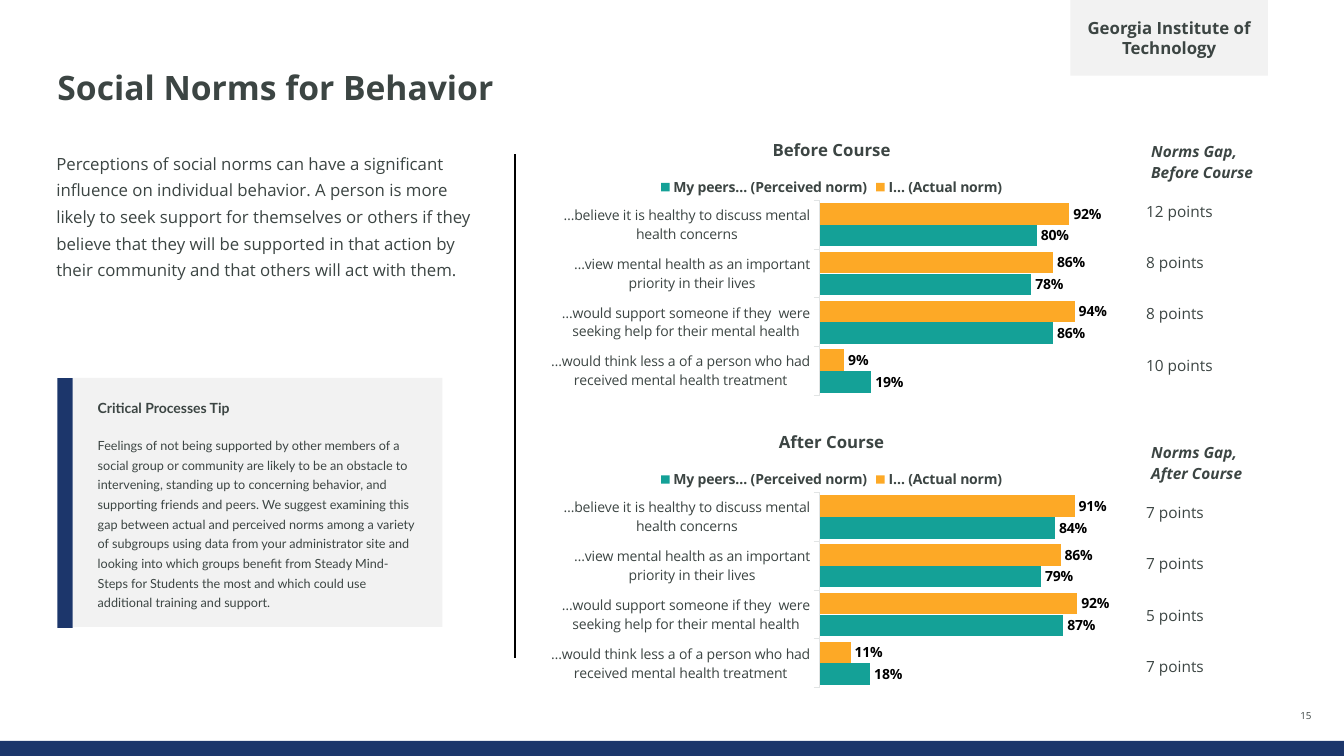
from lxml import etree
from pptx import Presentation
from pptx.chart.data import CategoryChartData
from pptx.dml.color import RGBColor
from pptx.enum.chart import XL_CHART_TYPE, XL_LABEL_POSITION, XL_LEGEND_POSITION, XL_TICK_LABEL_POSITION, XL_TICK_MARK
from pptx.enum.shapes import MSO_CONNECTOR, MSO_SHAPE
from pptx.enum.text import MSO_ANCHOR, PP_ALIGN
from pptx.oxml import parse_xml
from pptx.oxml.ns import nsdecls, qn
from pptx.util import Pt

RECT, STRAIGHT = MSO_SHAPE.RECTANGLE, MSO_CONNECTOR.STRAIGHT
BAR, OUT_END = XL_CHART_TYPE.BAR_CLUSTERED, XL_LABEL_POSITION.OUTSIDE_END
LEGEND_TOP, LOW = XL_LEGEND_POSITION.TOP, XL_TICK_LABEL_POSITION.LOW
TICK_OUT, TICK_NONE = XL_TICK_MARK.OUTSIDE, XL_TICK_MARK.NONE
TOP, MIDDLE, BOTTOM = MSO_ANCHOR.TOP, MSO_ANCHOR.MIDDLE, MSO_ANCHOR.BOTTOM
CENTER, LEFT = PP_ALIGN.CENTER, PP_ALIGN.LEFT

NAVY, GRAY, INK, BLACK = "1C366B", "F2F2F2", "3C4543", "000000"
ORANGE, TEAL, AXIS = "FDA926", "14A197", "E1E4E4"

TITLE = "Social Norms for Behavior"
SCHOOL = "Georgia Institute of Technology"
INTRO = ("Perceptions of social norms can have a significant influence on individual behavior. "
         "A person is more likely to seek support for themselves or others if they believe that "
         "they will be supported in that action by their community and that others will act with them.")
TIP_HEAD = "Critical Processes Tip"
TIP = ("Feelings of not being supported by other members of a social group or community are likely "
       "to be an obstacle to intervening, standing up to concerning behavior, and supporting friends "
       "and peers. We suggest examining this gap between actual and perceived norms among a variety "
       "of subgroups using data from your administrator site and looking into which groups benefit "
       "from Steady Mind-Steps for Students the most and which could use additional training and support.")
NORMS = ["…believe it is healthy to discuss mental health concerns",
         "…view mental health as an important priority in their lives",
         "…would support someone if they  were seeking help for their mental health",
         "…would think less a of a person who had received mental health treatment"]
SERIES = [("I… (Actual norm)", ORANGE), ("My peers… (Perceived norm)", TEAL)]
COURSES = [
    {"name": "Before Course", "chart_top": 87.12, "table_top": 97.2, "plot_w": 0.464,
     "values": [(0.92, 0.86, 0.94, 0.09), (0.8, 0.78, 0.86, 0.19)],
     "gaps": [12, 8, 8, 10]},
    {"name": "After Course", "chart_top": 295.92, "table_top": 312.48, "plot_w": 0.479,
     "values": [(0.91, 0.86, 0.92, 0.11), (0.84, 0.79, 0.87, 0.18)],
     "gaps": [7, 7, 5, 7]},
]


def rgb(value):
    return RGBColor.from_string(value)


def style(font, size, color=INK, name="Open Sans", **flags):
    values = {"size": Pt(size), "name": name, "bold": False, "italic": False, **flags}
    for key, value in values.items():
        setattr(font, key, value)
    font.color.rgb = rgb(color)


def write(tf, paragraphs, align=LEFT, spacing=None, before=0):
    for i, (text, fmt) in enumerate(paragraphs):
        p = tf.paragraphs[0] if i == 0 else tf.add_paragraph()
        p.alignment = align
        if spacing:
            p.line_spacing = spacing
        if i:
            p.space_before = Pt(before)
        r = p.add_run()
        r.text = text
        style(r.font, **fmt)


def set_frame(tf, anchor, side, edge):
    values = {"word_wrap": True, "vertical_anchor": anchor, "margin_left": Pt(side),
              "margin_right": Pt(side), "margin_top": Pt(edge), "margin_bottom": Pt(edge)}
    for key, value in values.items():
        setattr(tf, key, value)


def add_text(box, paragraphs, anchor=TOP, side=0, edge=0, **layout):
    tf = s.shapes.add_textbox(*map(Pt, box)).text_frame
    set_frame(tf, anchor, side, edge)
    write(tf, paragraphs, **layout)


def add_rect(box, color, paragraphs=(), side=0, **layout):
    sp = s.shapes.add_shape(RECT, *map(Pt, box))
    sp.shadow.inherit = False
    sp.fill.solid()
    sp.fill.fore_color.rgb = rgb(color)
    sp.line.fill.background()
    set_frame(sp.text_frame, MIDDLE, side, 0)
    write(sp.text_frame, paragraphs, **layout)


def set_plot_area(chart, x, y, w, h):
    plot_area = chart._chartSpace.chart.plotArea
    for old in plot_area.findall(qn("c:layout")):
        plot_area.remove(old)
    parts = [("layoutTarget", "inner"), ("xMode", "edge"), ("yMode", "edge"),
             ("x", x), ("y", y), ("w", w), ("h", h)]
    layout = parse_xml(f"<c:layout {nsdecls('c')}/>")
    manual = etree.SubElement(layout, qn("c:manualLayout"))
    for tag, value in parts:
        etree.SubElement(manual, qn(f"c:{tag}")).set("val", str(value))
    plot_area.insert(0, layout)


def add_norms_chart(course):
    data = CategoryChartData(number_format="0%")
    data.categories = NORMS
    for (name, _), values in zip(SERIES, course["values"]):
        data.add_series(name, values)
    box = (385.2, course["chart_top"], 417.6, 208.8)
    chart = s.shapes.add_chart(BAR, *map(Pt, box), data).chart
    style(chart.font, 10)
    chart.has_title = True
    write(chart.chart_title.text_frame, [(course["name"], {"size": 12, "bold": True})], CENTER)
    chart.chart_title.include_in_layout = False
    chart.has_legend = True
    chart.legend.position = LEGEND_TOP
    chart.legend.include_in_layout = False
    style(chart.legend.font, 10, bold=True)
    cat, val = chart.category_axis, chart.value_axis
    cat.reverse_order = True
    cat.major_tick_mark, cat.minor_tick_mark = TICK_OUT, TICK_NONE
    cat.tick_label_position = LOW
    cat.format.line.color.rgb = rgb(AXIS)
    cat.format.line.width = Pt(0.75)
    style(cat.tick_labels.font, 10)
    val.minimum_scale, val.maximum_scale = 0, 1
    val.has_major_gridlines = False
    val.visible = False
    plot = chart.plots[0]
    plot.gap_width, plot.overlap, plot.vary_by_categories = 26, -1, False
    for series, (_, color) in zip(plot.series, SERIES):
        series.format.fill.solid()
        series.format.fill.fore_color.rgb = rgb(color)
        labels = series.data_labels
        labels.show_value = True
        labels.position = OUT_END
        labels.number_format = "0%"
        labels.number_format_is_linked = False
        style(labels.font, 10, BLACK, bold=True)
    set_plot_area(chart, 0.48, 0.268, course["plot_w"], 0.668)


def add_gap_table(course):
    rows = [f"Norms Gap, {course['name']}"] + [f"{gap} points" for gap in course["gaps"]]
    box = (815.04, course["table_top"], 97.92, 182.16)
    table = s.shapes.add_table(len(rows), 1, *map(Pt, box)).table
    table.first_row = table.horz_banding = False
    for i, text in enumerate(rows):
        header = i == 0
        table.rows[i].height = Pt(35.28 if header else 36.72)
        cell = table.cell(i, 0)
        cell.fill.background()
        cell.vertical_anchor = MIDDLE
        cell.margin_left = cell.margin_right = Pt(7.2 if header else 3.6)
        cell.margin_top = cell.margin_bottom = Pt(3.6 if header else 0)
        write(cell.text_frame, [(text, {"size": 11, "bold": header, "italic": header})])


prs = Presentation()
prs.slide_width, prs.slide_height = Pt(960), Pt(540)
s = prs.slides.add_slide(prs.slide_layouts[6])

add_rect((0, 529.2, 960, 10.8), NAVY)
add_text((41.04, 51.12, 865.44, 50.4), [(TITLE, {"size": 24, "bold": True})], spacing=0.9)
add_text((914.4, 504.72, 36.72, 10.8), [("15", {"size": 7})], BOTTOM, align=CENTER)
add_text((33.12, 101.52, 317.52, 136.08), [(INTRO, {"size": 12})], side=7.2, edge=3.6, spacing=1.32)

divider = s.shapes.add_connector(STRAIGHT, Pt(367.92), Pt(110.16), Pt(367.92), Pt(470.16))
divider.line.color.rgb = rgb(BLACK)
divider.line.width = Pt(1)
etree.SubElement(divider._element.spPr, qn("a:effectLst"))

add_rect((51.84, 270, 264.24, 177.84), GRAY,
         [(TIP_HEAD, {"size": 10, "name": "Lato", "bold": True}), (TIP, {"size": 9, "name": "Lato"})],
         side=18, spacing=1.3, before=12)
add_rect((41.04, 270, 10.8, 178.56), NAVY)
for course in COURSES:
    add_norms_chart(course)
    add_gap_table(course)
add_rect((764.64, 0, 141.12, 54), GRAY, [(SCHOOL, {"size": 12, "bold": True})], side=7.2, align=CENTER)

prs.save("out.pptx")
